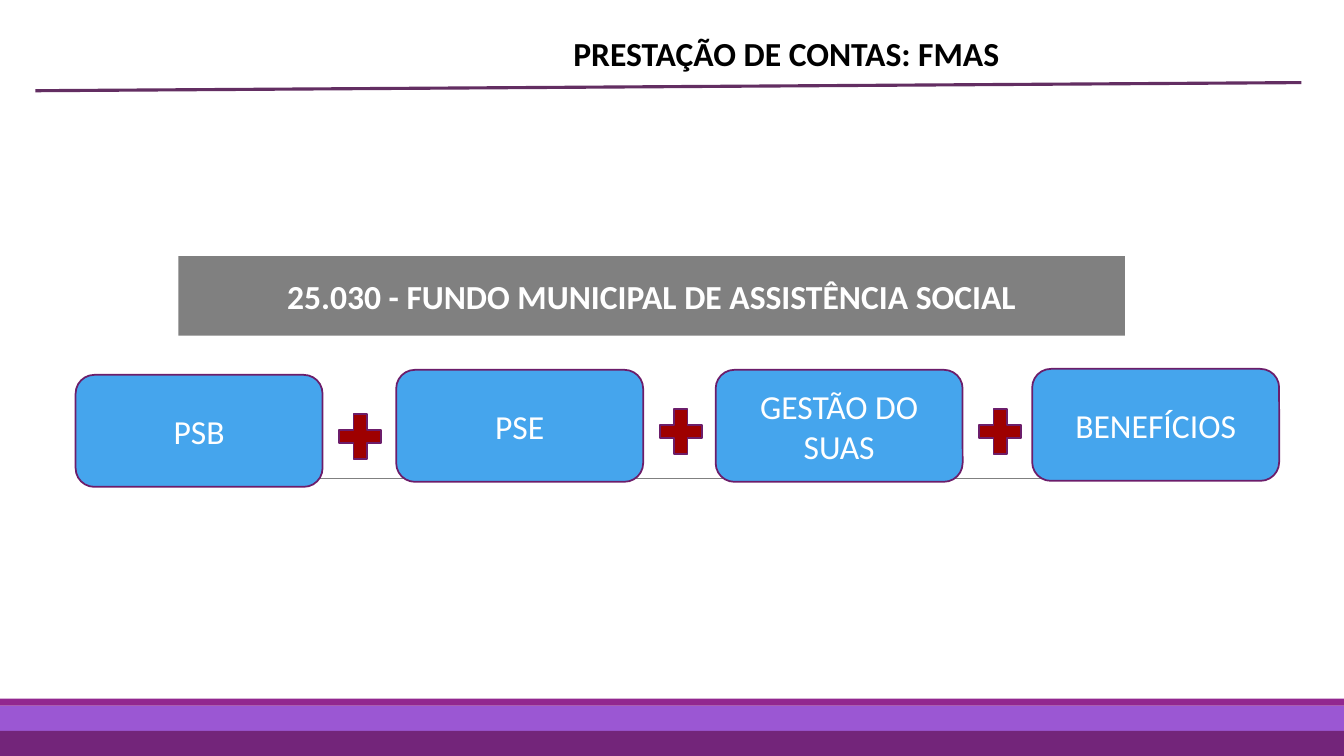
from pptx import Presentation
from pptx.dml.color import RGBColor
from pptx.enum.shapes import MSO_CONNECTOR as CONN, MSO_SHAPE as SHAPE
from pptx.enum.text import MSO_ANCHOR as ANCHOR, PP_ALIGN as ALIGN
from pptx.oxml.ns import qn
from pptx.util import Pt
from lxml import etree

BLACK = RGBColor(0x00, 0x00, 0x00)
WHITE = RGBColor(0xFF, 0xFF, 0xFF)
GRAY = RGBColor(0x80, 0x80, 0x80)
BLUE = RGBColor(0x45, 0xA5, 0xED)
RED = RGBColor(0x9E, 0x00, 0x00)
OUTLINE = RGBColor(0x6C, 0x1D, 0x6A)
RULE = RGBColor(0x63, 0x2E, 0x62)
LILAC = RGBColor(0x9B, 0x57, 0xD3)
MAGENTA = RGBColor(0x92, 0x27, 0x8F)
PURPLE = RGBColor(0x6D, 0x1D, 0x6B)

CARDS = [
    ("PSB", 54, 267.8),
    ("PSE", 283, 264.2),
    ("GESTÃO DO SUAS", 511.2, 264.2),
    ("BENEFÍCIOS", 737.3, 263.5),
]


def write(sp, text, color, bold=False):
    tf = sp.text_frame
    for name, value in {"word_wrap": True, "vertical_anchor": ANCHOR.MIDDLE}.items():
        setattr(tf, name, value)
    p = tf.paragraphs[0]
    p.alignment = ALIGN.CENTER
    r = p.add_run()
    r.text = text
    for name, value in {"name": "Calibri", "size": Pt(24), "bold": bold}.items():
        setattr(r.font, name, value)
    r.font.color.rgb = color


def add_block(s, kind, box, fill, outline=None):
    sp = s.shapes.add_shape(kind, *map(Pt, box))
    sp.shadow.inherit = False
    sp.fill.solid()
    sp.fill.fore_color.rgb = fill
    if outline is None:
        sp.line.fill.background()
    else:
        sp.line.color.rgb = outline
        sp.line.width = Pt(1.25)
    return sp


def add_line(s, start, end, color, width):
    line = s.shapes.add_connector(CONN.STRAIGHT, *map(Pt, start + end))
    line.line.color.rgb = color
    line.line.width = Pt(width)
    etree.SubElement(line._element.spPr, qn("a:effectLst"))


def add_footer(s, left, top, width, height):
    add_block(s, SHAPE.RECTANGLE, (left, top + 5, width, height - 5), LILAC)
    add_block(s, SHAPE.RECTANGLE, (left, top, width, 5), MAGENTA)
    band = add_block(s, SHAPE.RECTANGLE, (left, top + height - 18, width, 18), PURPLE)
    color = band._element.spPr.find(qn("a:solidFill"))[0]
    etree.SubElement(color, qn("a:alpha"), val="85000")


def add_header(s, left, top, width, height):
    title = s.shapes.title
    box = (left + 254.2, top, 564.5, 36)
    for name, value in zip(("left", "top", "width", "height"), box):
        setattr(title, name, Pt(value))
    write(title, "PRESTAÇÃO DE CONTAS: FMAS", BLACK, bold=True)
    bottom = top + height
    add_line(s, (left, bottom), (left + width, bottom - 5.8), RULE, 2.25)


def add_fund(s, left, top, width, height):
    fund = add_block(s, SHAPE.RECTANGLE, (left, top, width, height), GRAY)
    write(fund, "25.030 - FUNDO MUNICIPAL DE ASSISTÊNCIA SOCIAL", WHITE, bold=True)


def add_cards(s, cards, width, height):
    add_line(s, (95, 342), (872.6, 342), GRAY, 0.5)
    for i, (text, left, top) in enumerate(cards):
        card = add_block(s, SHAPE.ROUNDED_RECTANGLE, (left, top, width, height), BLUE, OUTLINE)
        write(card, text, WHITE)
        if i < len(cards) - 1:
            plus = (left + width + 6.4, top + 22, 41, 44)
            add_block(s, SHAPE.MATH_PLUS, plus, RED, OUTLINE)


def main():
    prs = Presentation()
    prs.slide_width, prs.slide_height = Pt(960), Pt(540)
    s = prs.slides.add_slide(prs.slide_layouts[5])
    add_footer(s, 0, 499, 960, 41)
    add_header(s, 25.2, 20.2, 904.3, 44.6)
    add_fund(s, 127.4, 182.9, 676.1, 56.9)
    add_cards(s, CARDS, 176.4, 80)
    prs.save("out.pptx")


if __name__ == "__main__":
    main()
